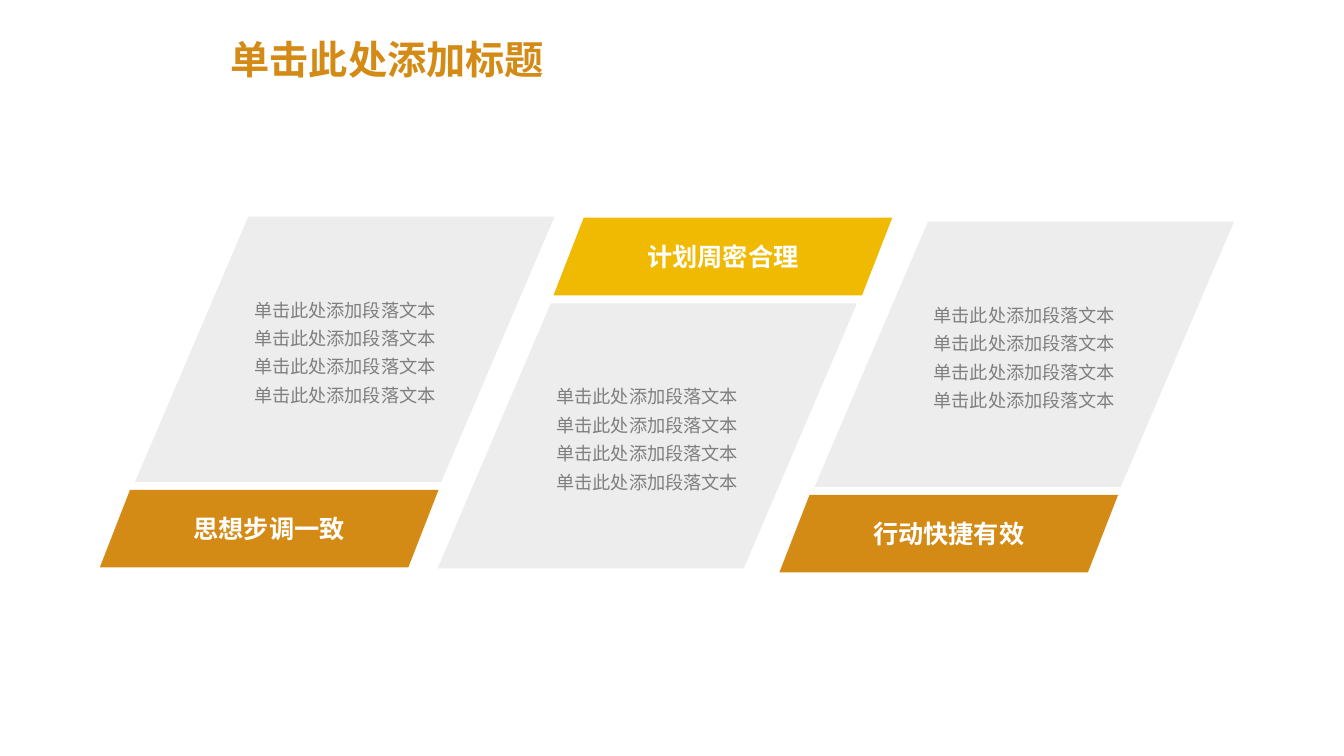
from dataclasses import dataclass

from lxml import etree
from pptx import Presentation
from pptx import util as u
from pptx.dml.color import RGBColor
from pptx.enum import shapes, text
from pptx.oxml.ns import qn


@dataclass(frozen=True)
class Theme:
    amber: str = "D48B16"
    yellow: str = "F0BA02"
    panel: str = "A6A6A6"
    panel_alpha: int = 20
    body: str = "7F7F7F"
    white: str = "FFFFFF"
    heading_font: str = "Montserrat"
    cjk_font: str = "Noto Sans CJK SC"
    title_size: int = 28
    label_size: int = 18
    body_size: int = 13


T = Theme()
CELL = 0.1
CARD_W, CARD_H = 45.1, 34.8
BAND_W, BAND_H, SLANT = 33.6, 7.7, 3
PANEL_W, PANEL_H, PANEL_ADJ = 41.6, 26.3, 0.427
BODY = ["单击此处添加段落文本"] * 4


def grid(n):
    return u.Inches(n * CELL)


def write(sp, lines, size, color, font=T.cjk_font, bold=False,
          align=text.PP_ALIGN.CENTER, spacing=None, inset=None):
    tf = sp.text_frame
    tf.word_wrap = True
    tf.vertical_anchor = text.MSO_ANCHOR.MIDDLE
    if inset is not None:
        tf.margin_left = tf.margin_right = tf.margin_top = tf.margin_bottom = inset
    for i, line in enumerate(lines):
        p = tf.paragraphs[0] if i == 0 else tf.add_paragraph()
        p.alignment = align
        p.line_spacing = spacing
        r = p.add_run()
        r.text = line
        r.font.size = u.Pt(size)
        r.font.bold = bold
        r.font.color.rgb = RGBColor.from_string(color)
        r.font.name = font
        etree.SubElement(r.font._element, qn("a:ea"), typeface=T.cjk_font)


def paint(sp, color, alpha=None):
    sp.shadow.inherit = False
    sp.fill.solid()
    sp.fill.fore_color.rgb = RGBColor.from_string(color)
    sp.line.fill.background()
    if alpha is not None:
        clr = sp.fill._xPr.find(qn("a:solidFill"))[0]
        etree.SubElement(clr, qn("a:alpha"), val=str(alpha * 1000))


def add_title(s, x, y, w, h):
    sp = s.shapes.add_textbox(grid(x), grid(y), grid(w), grid(h))
    write(sp, ["单击此处添加标题"], T.title_size, T.amber, font=T.heading_font,
          bold=True, align=text.PP_ALIGN.LEFT, spacing=0.9)


def add_band(group, x, y, label, color):
    fb = group.shapes.build_freeform(grid(x + SLANT), grid(y))
    corners = [(x + BAND_W, y), (x + BAND_W - SLANT, y + BAND_H), (x, y + BAND_H)]
    fb.add_line_segments([(grid(a), grid(b)) for a, b in corners], close=True)
    sp = fb.convert_to_shape()
    paint(sp, color)
    write(sp, [label], T.label_size, T.white, bold=True)


def add_panel(group, x, y):
    sp = group.shapes.add_shape(shapes.MSO_SHAPE.PARALLELOGRAM,
                                grid(x), grid(y), grid(PANEL_W), grid(PANEL_H))
    sp.adjustments[0] = PANEL_ADJ
    paint(sp, T.panel, T.panel_alpha)
    write(sp, BODY, T.body_size, T.body, spacing=1.3, inset=0)


def add_card(s, x, y, label, color, band_on_top):
    group = s.shapes.add_group_shape()
    right, bottom = x + CARD_W, y + CARD_H
    if band_on_top:
        add_band(group, right - BAND_W, y, label, color)
        add_panel(group, x, bottom - PANEL_H)
    else:
        add_band(group, x, bottom - BAND_H, label, color)
        add_panel(group, right - PANEL_W, y)


def main():
    prs = Presentation()
    prs.slide_width, prs.slide_height = u.Inches(13.33), u.Inches(7.5)
    s = prs.slides.add_slide(prs.slide_layouts[6])
    cards = [
        (9.9, 21.5, "思想步调一致", T.amber, False),
        (43.4, 21.6, "计划周密合理", T.yellow, True),
        (77.3, 22, "行动快捷有效", T.amber, False),
    ]
    for card in cards:
        add_card(s, *card)
    add_title(s, 21.9, 3.4, 110, 5.4)
    prs.save("out.pptx")


if __name__ == "__main__":
    main()
